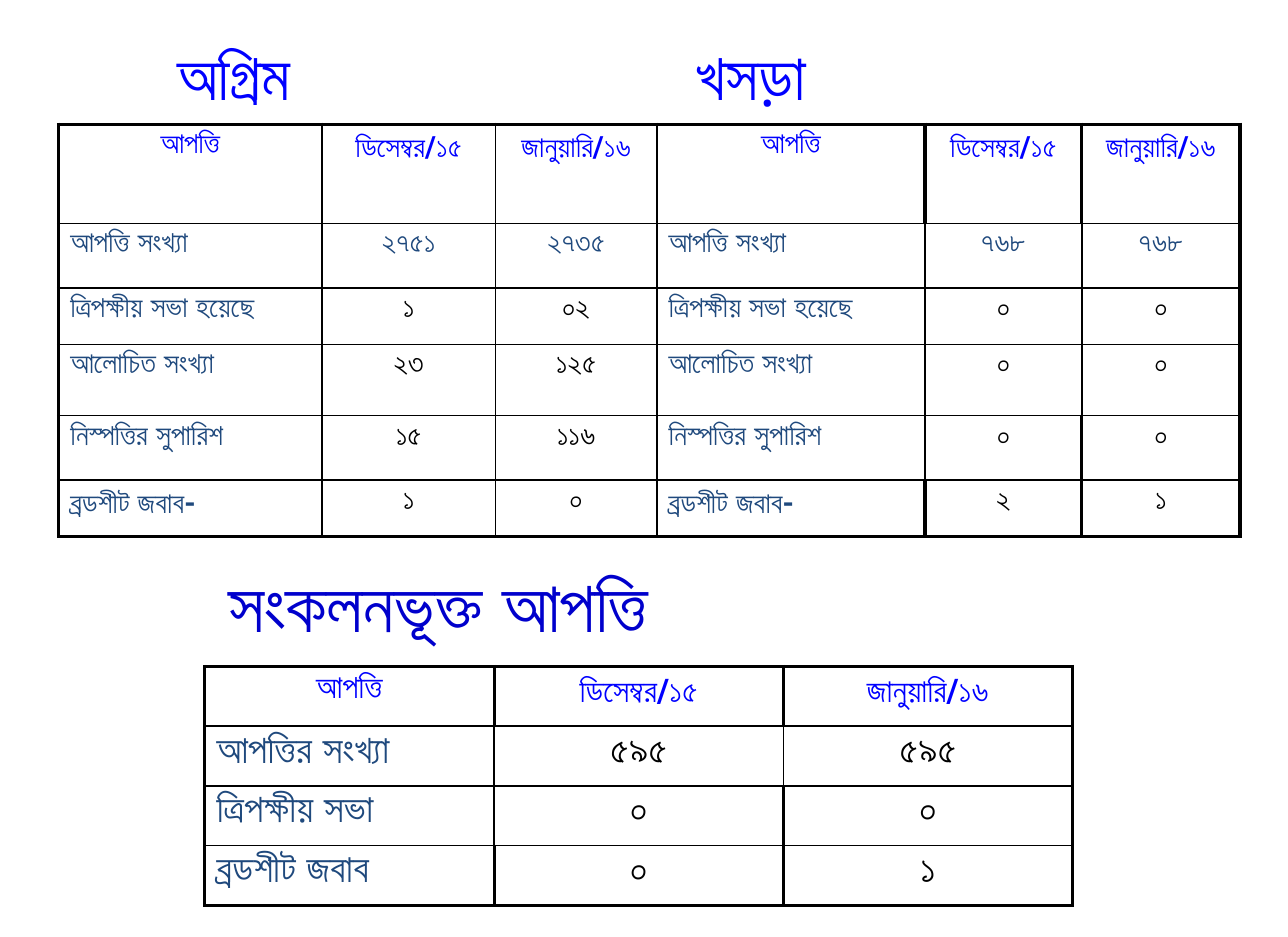
from lxml import etree
from pptx import Presentation
from pptx.dml.color import RGBColor
from pptx.enum.text import MSO_ANCHOR, MSO_AUTO_SIZE, PP_ALIGN
from pptx.oxml.ns import qn
from pptx.util import Emu, Pt

LEFT, CENTER, RIGHT = PP_ALIGN.LEFT, PP_ALIGN.CENTER, PP_ALIGN.RIGHT
TOP = MSO_ANCHOR.TOP
FIT_SHAPE = MSO_AUTO_SIZE.SHAPE_TO_FIT_TEXT
TITLE_ONLY = 5
EMU_PER_PX = 9144
FONT = "Roboto"
BLUE, DEEP_BLUE, NAVY, BLACK = "0000FF", "0000CC", "1F497D", "000000"
THIN, THICK = 1, 2.25

DRAFT_ROWS = [
    ["আপত্তি", "ডিসেম্বর/১৫", "জানুয়ারি/১৬"] * 2,
    ["আপত্তি সংখ্যা", "২৭৫১", "২৭৩৫", "আপত্তি সংখ্যা", "৭৬৮", "৭৬৮"],
    ["ত্রিপক্ষীয় সভা হয়েছে", "১", "০২", "ত্রিপক্ষীয় সভা হয়েছে", "০", "০"],
    ["আলোচিত সংখ্যা", "২৩", "১২৫", "আলোচিত সংখ্যা", "০", "০"],
    ["নিস্পত্তির সুপারিশ", "১৫", "১১৬", "নিস্পত্তির সুপারিশ", "০", "০"],
    ["ব্রডশীট জবাব-", "১", "০", "ব্রডশীট জবাব-", "২", "১"],
]
COMPILED_ROWS = [
    ["আপত্তি", "ডিসেম্বর/১৫", "জানুয়ারি/১৬"],
    ["আপত্তির সংখ্যা", "৫৯৫", "৫৯৫"],
    ["ত্রিপক্ষীয় সভা", "০", "০"],
    ["ব্রডশীট জবাব", "০", "১"],
]
DRAFT_THICK = {(0, 4), (0, 5), (4, 5), (5, 4), (5, 5)}
COMPILED_THICK = {(0, 1), (0, 2), (2, 2), (3, 1), (3, 2)}


def px(value):
    return Emu(value * EMU_PER_PX)


def color(value):
    return RGBColor.from_string(value)


def set_text(frame, text, size, hue, align, bold=True, space=0.2):
    frame.text = text
    frame.margin_left = frame.margin_right = px(11)
    frame.margin_top = frame.margin_bottom = px(5)
    paragraph = frame.paragraphs[0]
    paragraph.alignment = align
    paragraph.space_before = Pt(round(size * space, 1))
    font = paragraph.runs[0].font
    font.name, font.size, font.bold = FONT, Pt(size), bold
    font.color.rgb = color(hue)
    return paragraph


def format_heading(shape, box, text, size, hue, align, space, wrap=True):
    shape.left, shape.top, shape.width, shape.height = map(px, box)
    frame = shape.text_frame
    paragraph = set_text(frame, text, size, hue, align, space=space)
    frame.word_wrap = wrap
    frame.auto_size = FIT_SHAPE
    frame.vertical_anchor = TOP
    return paragraph


def add_heading(slide, box, *style, **options):
    shape = slide.shapes.add_textbox(*map(px, box))
    return format_heading(shape, box, *style, **options)


def set_borders(cell, widths):
    properties = cell._tc.get_or_add_tcPr()
    for index, (side, width) in enumerate(widths.items()):
        line = etree.Element(qn(f"a:ln{side}"), w=str(Pt(width)))
        fill = etree.SubElement(line, qn("a:solidFill"))
        etree.SubElement(fill, qn("a:srgbClr"), val=BLACK)
        properties.insert(index, line)


def add_grid(slide, left, top, widths, heights, rows, thick, style):
    last_row, last_column = len(rows), len(widths)
    frame = slide.shapes.add_table(last_row, last_column, px(left), px(top),
                                   px(sum(widths)), px(sum(heights)))
    table = frame.table
    table.first_row = table.horz_banding = False
    for column, width in zip(table.columns, widths):
        column.width = px(width)
    for row, height in zip(table.rows, heights):
        row.height = px(height)

    def vertical(row, edge):
        return THICK if edge in (0, last_column) or (row, edge) in thick else THIN

    def horizontal(edge):
        return THICK if edge in (0, last_row) else THIN

    for row, texts in enumerate(rows):
        for column, text in enumerate(texts):
            cell = table.cell(row, column)
            cell.fill.background()
            set_text(cell.text_frame, text, *style(row, column))
            set_borders(cell, {"L": vertical(row, column), "R": vertical(row, column + 1),
                               "T": horizontal(row), "B": horizontal(row + 1)})


def draft_style(row, column):
    if row == 0:
        return 18, BLUE, CENTER
    is_label = column % 3 == 0
    return 18, NAVY if is_label or row == 1 else BLACK, LEFT if is_label else CENTER


def compiled_style(row, column):
    if row == 0:
        return 20, BLUE, CENTER
    if column == 0:
        return 24, NAVY, LEFT
    return 24, BLACK, CENTER, False


def main():
    presentation = Presentation()
    presentation.slide_width, presentation.slide_height = px(1100), px(800)
    slide = presentation.slides.add_slide(presentation.slide_layouts[TITLE_ONLY])
    add_grid(slide, 50, 106, [225, 148, 138, 229, 134, 135],
             [85, 55, 48, 61, 55, 48], DRAFT_ROWS, DRAFT_THICK, draft_style)
    add_grid(slide, 175, 569, [247] * 3, [51] * 4,
             COMPILED_ROWS, COMPILED_THICK, compiled_style)
    compiled = add_heading(slide, (111, 488, 454, 70), "সংকলনভূক্ত আপত্তি",
                           44, DEEP_BLUE, RIGHT, 0.2, wrap=False)
    compiled.line_spacing = 0.8
    format_heading(slide.shapes.title, (92, 25, 167, 78), "অগ্রিম", 40, BLUE, RIGHT, 0.5)
    add_heading(slide, (583, 25, 167, 78), "খসড়া", 40, BLUE, LEFT, 0.5)
    presentation.save("out.pptx")


if __name__ == "__main__":
    main()
